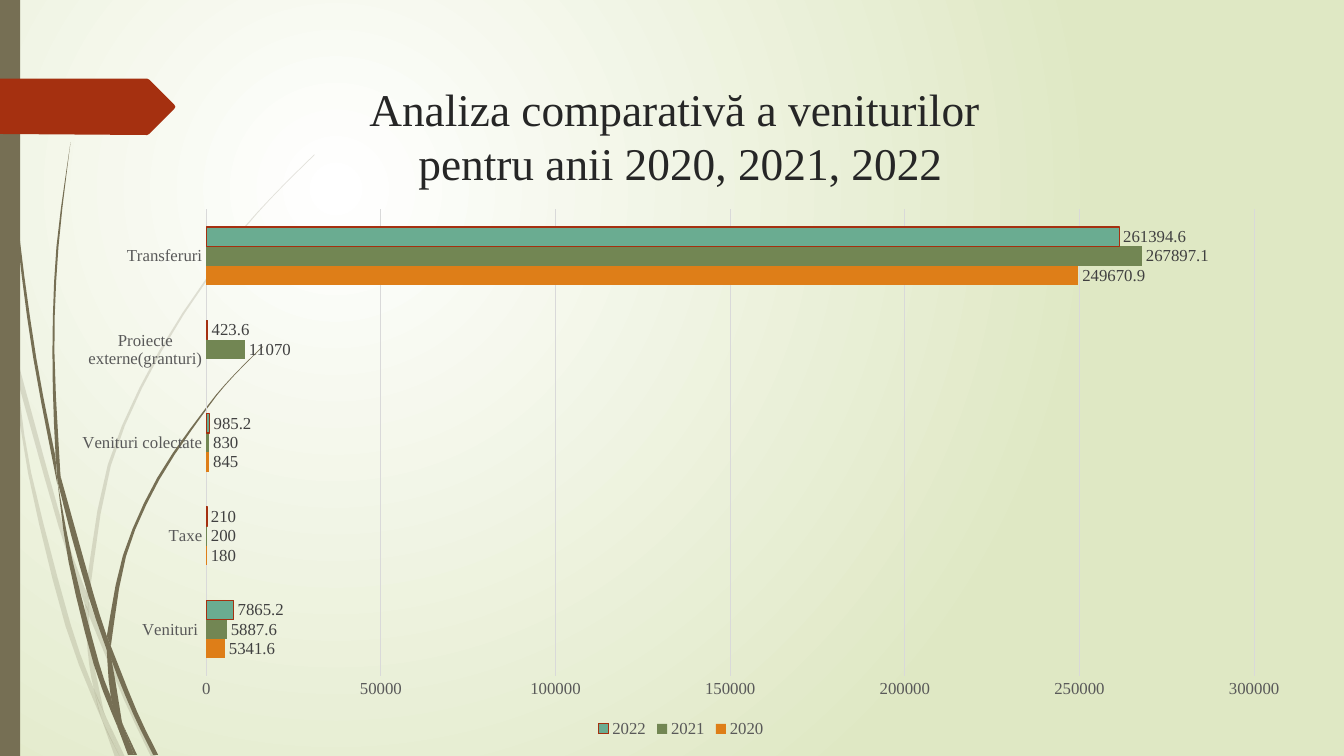
from lxml import etree
from pptx import Presentation
from pptx.chart.data import CategoryChartData
from pptx.dml.color import RGBColor
from pptx.enum.chart import XL_CHART_TYPE, XL_LABEL_POSITION, XL_LEGEND_POSITION, XL_TICK_MARK
from pptx.enum.shapes import MSO_SHAPE
from pptx.enum.text import MSO_ANCHOR, MSO_AUTO_SIZE, PP_ALIGN
from pptx.oxml.ns import qn
from pptx.util import Inches, Pt

BAR_CLUSTERED = XL_CHART_TYPE.BAR_CLUSTERED
OUTSIDE_END = XL_LABEL_POSITION.OUTSIDE_END
LEGEND_BOTTOM = XL_LEGEND_POSITION.BOTTOM
NO_TICK = XL_TICK_MARK.NONE
RECTANGLE = MSO_SHAPE.RECTANGLE
TOP = MSO_ANCHOR.TOP
FIXED_SIZE = MSO_AUTO_SIZE.NONE
CENTER = PP_ALIGN.CENTER

WHITE = RGBColor(0xFF, 0xFF, 0xFF)
BLACK = RGBColor(0x00, 0x00, 0x00)
PALE_GREEN = RGBColor(0xDF, 0xE8, 0xC4)
OLIVE = RGBColor(0x76, 0x6F, 0x54)
RUST = RGBColor(0xA5, 0x30, 0x10)
ORANGE = RGBColor(0xDE, 0x7E, 0x18)
GREEN = RGBColor(0x72, 0x86, 0x53)
TEAL = RGBColor(0x6A, 0xAC, 0x91)
TITLE_INK = RGBColor(0x26, 0x26, 0x26)
LABEL_INK = RGBColor(0x40, 0x40, 0x40)
AXIS_INK = RGBColor(0x59, 0x59, 0x59)
GRID = RGBColor(0xD9, 0xD9, 0xD9)

CATEGORIES = ["Venituri ", "Taxe", "Venituri colectate", "Proiecte externe(granturi)", "Transferuri"]
REVENUES = [
    ("2020", [5341.6, 180, 845, None, 249670.9], ORANGE, None),
    ("2021", [5887.6, 200, 830, 11070, 267897.1], GREEN, None),
    ("2022", [7865.2, 210, 985.2, 423.6, 261394.6], TEAL, RUST),
]

FAINT_VINES = [
    ([(0.11, 3.5), (0.09, 3.22), (0, 2.82)], [(0, 2.99), (0.1, 3.44)]),
    ([(0.17, 3.76), (0.58, 5.22), (0.84, 5.99)], [(0.85, 5.86), (0.62, 5.2), (0.14, 3.45)]),
    ([(1.55, 7.51), (1.27, 6.92), (0.88, 5.96)], [(0.88, 6.1), (1.23, 6.94), (1.5, 7.51)]),
    ([(1.05, 7.11), (1.19, 7.51)], [(1.24, 7.51), (1.05, 7.11)]),
    ([(0.11, 3.5), (0.28, 4.7), (0.65, 6.21), (1.01, 7.14)],
     [(0.93, 6.83), (0.7, 6.19), (0.31, 4.69), (0.17, 3.76), (0.11, 3.5)]),
    ([(0.84, 5.99), (0.87, 6.46), (0.93, 6.83), (1.05, 7.11)],
     [(1.03, 7.06), (0.91, 6.46), (0.88, 6.08), (0.84, 5.99)]),
    ([(0.88, 5.96), (1.1, 4.62), (1.6, 3.49), (2.29, 2.45), (2.68, 1.98), (3.12, 1.54)],
     [(3.12, 1.53), (2.68, 1.97), (2.28, 2.44), (1.58, 3.48), (1.07, 4.61), (0.85, 5.86)]),
    ([(1.01, 7.14), (1.14, 7.51)], [(1.19, 7.51), (1.01, 7.14)]),
    ([(0.88, 6.1), (0.88, 5.96), (0.85, 5.86)], [(0.84, 5.99), (0.88, 6.08)]),
    ([(0.93, 6.83), (1.01, 7.14), (1.19, 7.51)], [(1.05, 7.11), (0.93, 6.83)]),
]
DARK_VINES = [
    ([(0.03, 0), (0.07, 1.1), (0.17, 2.33), (0.33, 3.55), (0.57, 4.81)],
     [(0.55, 4.53), (0.36, 3.55), (0.19, 2.32), (0.08, 1.09), (0.04, 0)]),
    ([(0.6, 4.72), (0.64, 5.05), (0.88, 5.92), (1.06, 6.45)],
     [(1.06, 6.31), (0.93, 5.9), (0.6, 4.72)]),
    ([(1.1, 6.41), (1.11, 6.56), (1.32, 7.08), (1.52, 7.49)],
     [(1.57, 7.49), (1.36, 7.06), (1.1, 6.41)]),
    ([(0.57, 4.77), (0.68, 5.57), (0.93, 6.59), (1.17, 7.22)],
     [(1.1, 6.91), (0.98, 6.57), (0.72, 5.56), (0.57, 4.77)]),
    ([(0.6, 4.72), (0.54, 3.49), (0.58, 2.45), (0.7, 1.41)],
     [(0.7, 1.41), (0.56, 2.45), (0.52, 3.49), (0.55, 4.49), (0.6, 4.72)]),
    ([(1.22, 7.19), (1.33, 7.49)], [(1.36, 7.49), (1.22, 7.19)]),
    ([(0.57, 4.77), (0.64, 5.05)], [(0.6, 4.72), (0.55, 4.49)]),
    ([(1.1, 6.41), (1.25, 5.52), (1.58, 4.76), (2.05, 4.06), (2.31, 3.74), (2.61, 3.44)],
     [(2.6, 3.44), (2.31, 3.73), (2.04, 4.05), (1.56, 4.74), (1.22, 5.51), (1.06, 6.31)]),
    ([(1.17, 7.22), (1.27, 7.49)], [(1.31, 7.49), (1.17, 7.22)]),
    ([(1.06, 6.45), (1.1, 6.91), (1.22, 7.19)], [(1.21, 7.16), (1.11, 6.56), (1.06, 6.45)]),
    ([(1.06, 6.45), (1.11, 6.56)], [(1.1, 6.41), (1.06, 6.31)]),
    ([(1.1, 6.91), (1.17, 7.22), (1.3, 7.49)], [(1.33, 7.49), (1.22, 7.19), (1.1, 6.91)]),
]
RIBBON = [(0, 0.78), (1.46, 0.78), (1.48, 0.79), (1.73, 1.04), (1.74, 1.06),
          (1.73, 1.08), (1.48, 1.33), (1.46, 1.34), (0, 1.33)]


def smooth(knots):
    if len(knots) == 2:
        return knots
    padded = [knots[0], *knots, knots[-1]]
    curve = [knots[0]]
    for before, start, end, after in zip(padded, padded[1:], padded[2:], padded[3:]):
        for t in (1 / 3, 2 / 3, 1):
            curve.append(tuple(
                0.5 * (2 * b + (c - a) * t + (2 * a - 5 * b + 4 * c - d) * t ** 2
                       + (3 * b - a - 3 * c + d) * t ** 3)
                for a, b, c, d in zip(before, start, end, after)))
    return curve


class SlideBuilder:
    """Holds the current slide, its master and the style shared by its elements."""

    font_name = "Times New Roman"

    def __init__(self, page):
        self.page = page
        self.master = page.slide_layout.slide_master

    def style_font(self, font, size, color):
        font.name = self.font_name
        font.size = Pt(size)
        font.color.rgb = color

    def paint(self, shape, color):
        shape.shadow.inherit = False
        shape.fill.solid()
        shape.fill.fore_color.rgb = color
        shape.line.fill.background()

    def move_to_master(self, shape):
        self.master.element.cSld.spTree.append(shape.element)

    def background(self, center_color, edge_color):
        fill = self.master.background.fill
        fill.gradient()
        for stop, color in zip(fill.gradient_stops, (center_color, edge_color)):
            stop.color.rgb = color
        gradient = self.master.element.find(".//" + qn("a:gradFill"))
        gradient.remove(gradient.find(qn("a:lin")))
        circle = etree.SubElement(gradient, qn("a:path"), path="circle")
        etree.SubElement(circle, qn("a:fillToRect"), l="50000", t="50000", r="100000", b="100000")

    def outline(self, shapes, points, color):
        corners = [(Inches(x), Inches(y)) for x, y in points]
        builder = shapes.build_freeform(*corners[0])
        builder.add_line_segments(corners[1:], close=True)
        shape = builder.convert_to_shape()
        self.paint(shape, color)
        return shape

    def vines(self, strands, color, opacity=None):
        group = self.page.shapes.add_group_shape()
        for one_edge, other_edge in strands:
            strand = self.outline(group.shapes, smooth(one_edge) + smooth(other_edge), color)
            if opacity:
                tint = strand.element.spPr.find(qn("a:solidFill"))[0]
                etree.SubElement(tint, qn("a:alpha"), val=str(opacity * 1000))
        self.move_to_master(group)

    def side_bar(self, left, top, width, height, color):
        box = self.page.shapes.add_shape(
            RECTANGLE, Inches(left), Inches(top), Inches(width), Inches(height))
        self.paint(box, color)
        self.move_to_master(box)

    def ribbon(self, points, color):
        self.move_to_master(self.outline(self.page.shapes, points, color))

    def title(self, text, left, top, width, height):
        box = self.page.shapes.title
        box.left, box.top = Inches(left), Inches(top)
        box.width, box.height = Inches(width), Inches(height)
        frame = box.text_frame
        frame.text = text
        frame.auto_size = FIXED_SIZE
        frame.vertical_anchor = TOP
        para = frame.paragraphs[0]
        para.alignment = CENTER
        self.style_font(para.font, 32.4, TITLE_INK)

    def bar_chart(self, categories, rows, left, top, width, height):
        data = CategoryChartData()
        data.categories = categories
        for name, values, _, _ in rows:
            data.add_series(name, values)
        chart = self.page.shapes.add_chart(
            BAR_CLUSTERED, Inches(left), Inches(top), Inches(width), Inches(height), data).chart
        chart.has_title = False
        self.style_font(chart.font, 10, BLACK)
        chart.has_legend = True
        chart.legend.position = LEGEND_BOTTOM
        chart.legend.include_in_layout = False
        self.style_font(chart.legend.font, 12, AXIS_INK)
        for axis in (chart.category_axis, chart.value_axis):
            axis.major_tick_mark = axis.minor_tick_mark = NO_TICK
            self.style_font(axis.tick_labels.font, 12, AXIS_INK)
        chart.value_axis.format.line.fill.background()
        for line in (chart.category_axis.format.line, chart.value_axis.major_gridlines.format.line):
            line.color.rgb = GRID
            line.width = Pt(0.75)
        plot = chart.plots[0]
        plot.gap_width = 182
        plot.vary_by_categories = False
        for series, (_, _, color, border) in zip(plot.series, rows):
            series.invert_if_negative = False
            series.format.fill.solid()
            series.format.fill.fore_color.rgb = color
            if border:
                series.format.line.color.rgb = border
                series.format.line.width = Pt(0.75)
            labels = series.data_labels
            labels.show_value = True
            labels.position = OUTSIDE_END
            self.style_font(labels.font, 12, LABEL_INK)


def main():
    deck = Presentation()
    deck.slide_width, deck.slide_height = Inches(40 / 3), Inches(7.5)
    page = deck.slides.add_slide(deck.slide_layouts[5])
    slide = SlideBuilder(page)
    slide.background(WHITE, PALE_GREEN)
    slide.vines(FAINT_VINES, OLIVE, opacity=20)
    slide.vines(DARK_VINES, OLIVE)
    slide.side_bar(0, 0, 0.2, 7.5, OLIVE)
    slide.ribbon(RIBBON, RUST)
    slide.title("Analiza comparativă a veniturilor \vpentru anii 2020, 2021, 2022", 1.5, 0.75, 10.5, 1.22)
    slide.bar_chart(CATEGORIES, REVENUES, 0.57, 1.97, 12.37, 5.39)
    deck.save("out.pptx")


if __name__ == "__main__":
    main()
